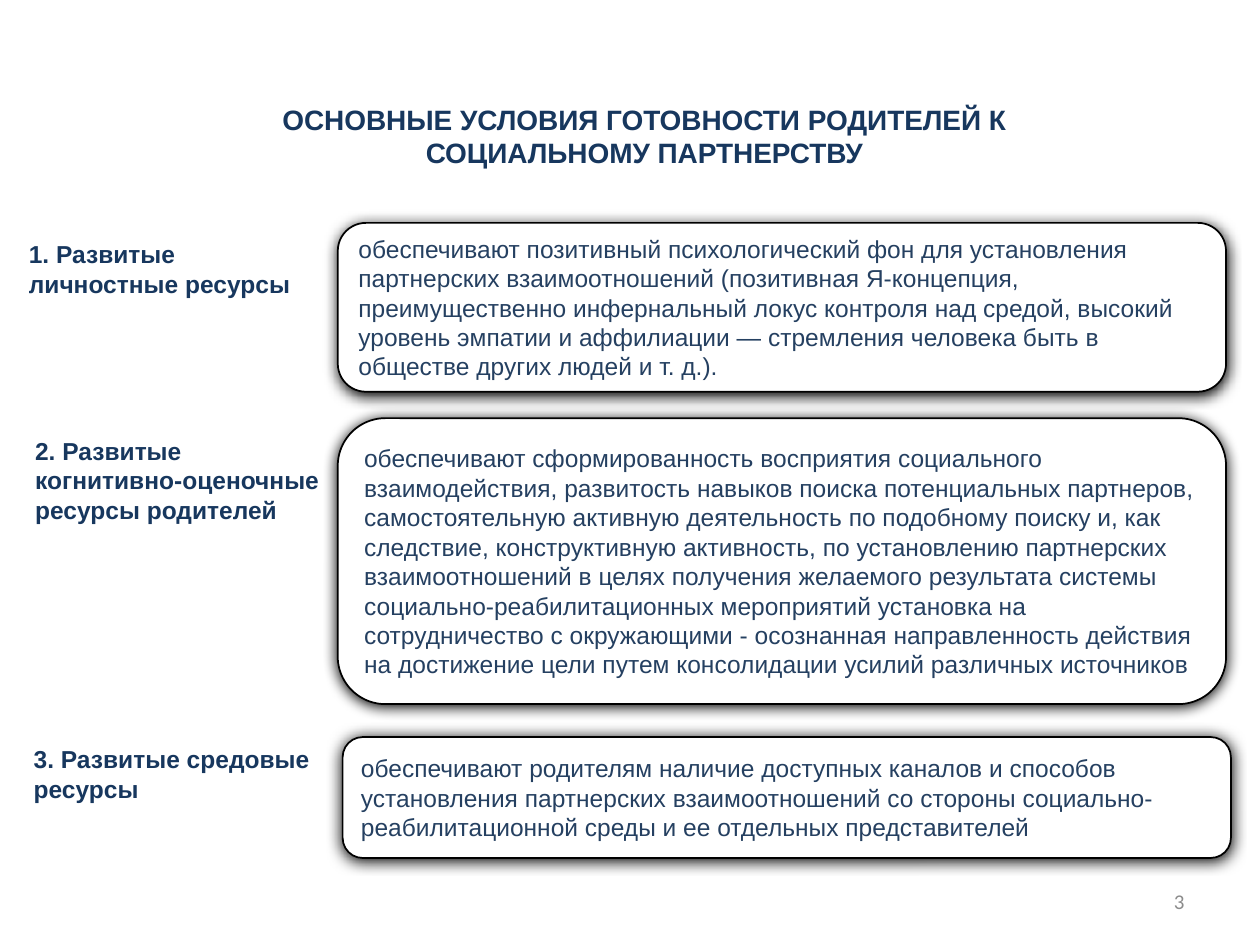
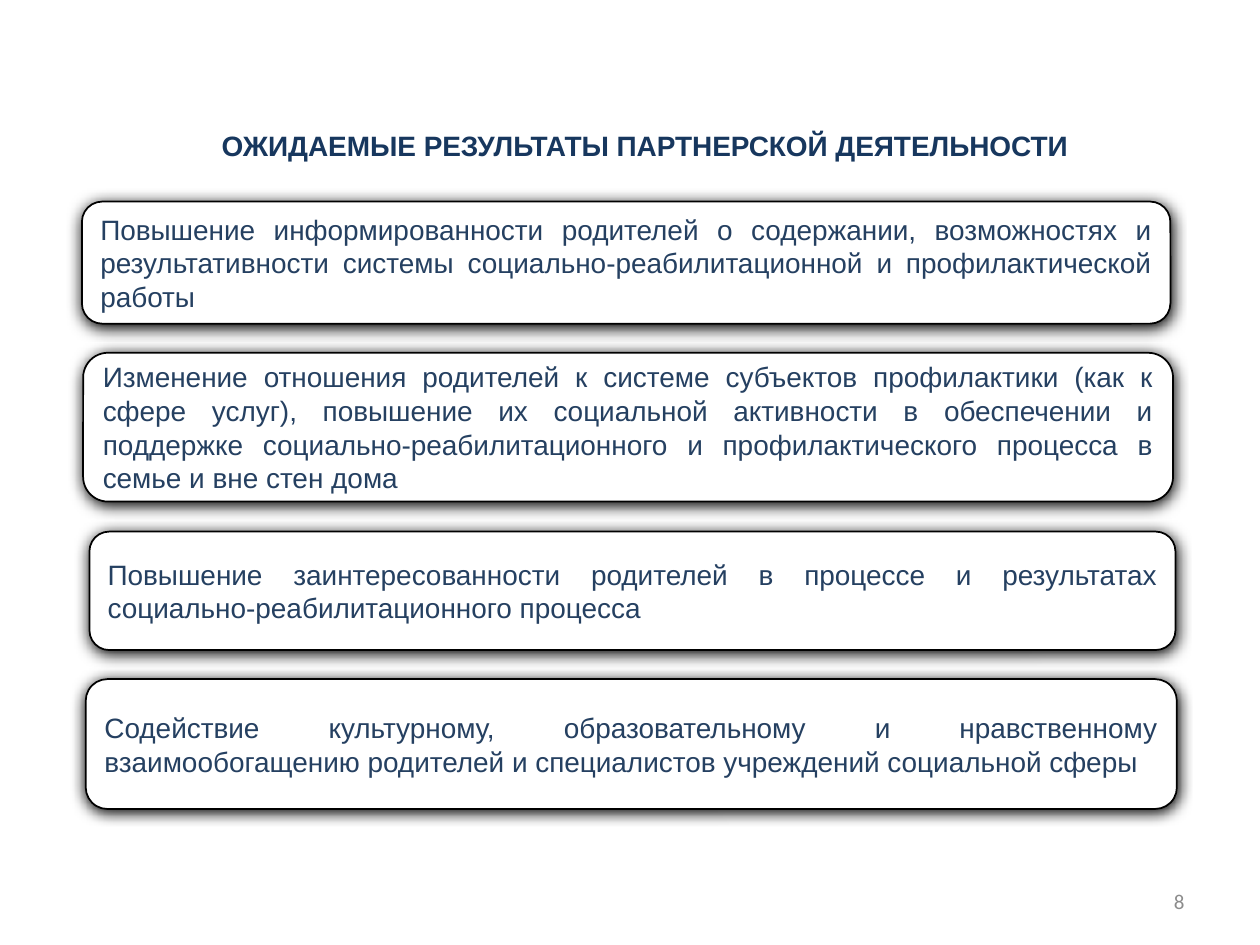
from dataclasses import dataclass
from lxml import etree
from pptx import Presentation
from pptx.dml.color import RGBColor
from pptx.enum.shapes import MSO_SHAPE as Shape
from pptx.enum.text import MSO_ANCHOR as Anchor, MSO_AUTO_SIZE as AutoSize, PP_ALIGN as Align
from pptx.oxml.ns import qn
from pptx.util import Pt


@dataclass(frozen=True)
class Theme:
    heading: RGBColor = RGBColor(0x17, 0x37, 0x5E)
    body: RGBColor = RGBColor(0x25, 0x40, 0x61)
    muted: RGBColor = RGBColor(0x8C, 0x8C, 0x8C)
    paper: RGBColor = RGBColor(0xFF, 0xFF, 0xFF)
    outline: RGBColor = RGBColor(0, 0, 0)
    font: str = "Arial"
    number_font: str = "Calibri"
    title_size: int = 16
    result_size: int = 16
    condition_size: int = 14
    number_size: int = 12


theme = Theme()


def write(box, text, size, color, align=Align.LEFT, anchor=Anchor.TOP, bold=False, font=theme.font):
    frame = box.text_frame
    frame.word_wrap = True
    frame.vertical_anchor = anchor
    frame.text = text
    paragraph = frame.paragraphs[0]
    paragraph.alignment = align
    paragraph.font.name = font
    paragraph.font.size = Pt(size)
    paragraph.font.bold = bold
    paragraph.font.color.rgb = color


def add_card(slide, area, text, size, align):
    card = slide.shapes.add_shape(Shape.ROUNDED_RECTANGLE, *map(Pt, area))
    card.fill.solid()
    card.fill.fore_color.rgb = theme.paper
    card.line.color.rgb = theme.outline
    card.line.width = Pt(1)
    card.shadow.inherit = False
    effects = card.element.spPr.find(qn("a:effectLst"))
    shadow = etree.SubElement(effects, qn("a:outerShdw"), blurRad=str(Pt(8.5)), dist=str(Pt(1)),
                              dir="5400000", algn="t", rotWithShape="0")
    etree.SubElement(shadow, qn("a:srgbClr"), val=str(theme.outline))
    write(card, text, size, theme.body, align, Anchor.MIDDLE)


deck = Presentation()
deck.slide_width, deck.slide_height = Pt(720), Pt(540)

headings = [
    ("ОСНОВНЫЕ УСЛОВИЯ ГОТОВНОСТИ РОДИТЕЛЕЙ К СОЦИАЛЬНОМУ ПАРТНЕРСТВУ", (121.7, 54.7, 493.2, 46.1), "3"),
    ("ОЖИДАЕМЫЕ РЕЗУЛЬТАТЫ ПАРТНЕРСКОЙ ДЕЯТЕЛЬНОСТИ", (96.5, 69.8, 544.3, 26.6), "8"),
]
for heading, area, number in headings:
    slide = deck.slides.add_slide(deck.slide_layouts[5])
    title = slide.shapes.title
    title.left, title.top, title.width, title.height = map(Pt, area)
    write(title, heading, theme.title_size, theme.heading, Align.CENTER, bold=True)
    title.text_frame.auto_size = AutoSize.NONE
    page_number = slide.shapes.add_textbox(Pt(516), Pt(500.5), Pt(168), Pt(28.8))
    write(page_number, number, theme.number_size, theme.muted, Align.RIGHT, Anchor.MIDDLE,
          font=theme.number_font)

conditions_slide, results_slide = deck.slides

conditions = [
    ("1. Развитые личностные ресурсы", (9.4, 133.2, 175, 41),
     "обеспечивают позитивный психологический фон для установления партнерских взаимоотношений "
     "(позитивная Я-концепция, преимущественно инфернальный локус контроля над средой, высокий "
     "уровень эмпатии и аффилиации — стремления человека быть в обществе других людей и т. д.).",
     (193, 127.4, 507.6, 96.5)),
    ("2. Развитые когнитивно-оценочные ресурсы родителей", (13, 245.5, 180, 58.3),
     "обеспечивают сформированность восприятия социального взаимодействия, развитость навыков "
     "поиска потенциальных партнеров, самостоятельную активную деятельность по подобному поиску "
     "и, как следствие, конструктивную активность, по установлению партнерских взаимоотношений "
     "в целях получения желаемого результата системы социально-реабилитационных мероприятий "
     "установка на сотрудничество с окружающими - осознанная направленность действия на "
     "достижение цели путем консолидации усилий различных источников",
     (193, 239, 507.6, 163.4)),
    ("3. Развитые средовые ресурсы", (12.2, 421.9, 180, 41),
     "обеспечивают родителям наличие доступных каналов и способов установления партнерских "
     "взаимоотношений со стороны социально-реабилитационной среды и ее отдельных представителей",
     (195.8, 421.2, 507.6, 69.1)),
]
for resource, resource_area, effect, effect_area in conditions:
    resource_label = conditions_slide.shapes.add_textbox(*map(Pt, resource_area))
    write(resource_label, resource, theme.condition_size, theme.heading, bold=True)
    resource_label.text_frame.auto_size = AutoSize.SHAPE_TO_FIT_TEXT
    add_card(conditions_slide, effect_area, effect, theme.condition_size, Align.LEFT)

results = [
    ("Повышение информированности родителей о содержании, возможностях и результативности "
     "системы социально-реабилитационной и профилактической работы",
     (46.8, 115.2, 622, 69.8)),
    ("Изменение отношения родителей к системе субъектов профилактики (как к сфере услуг), "
     "повышение их социальной активности в обеспечении и поддержке "
     "социально-реабилитационного и профилактического процесса в семье и вне стен дома",
     (47.5, 201.6, 622.8, 85)),
    ("Повышение заинтересованности родителей в процессе и результатах "
     "социально-реабилитационного процесса",
     (51.1, 303.8, 620.6, 67.7)),
    ("Содействие культурному, образовательному и нравственному взаимообогащению родителей "
     "и специалистов учреждений социальной сферы",
     (49, 388.1, 623.5, 74.2)),
]
for result, area in results:
    add_card(results_slide, area, result, theme.result_size, Align.JUSTIFY)

deck.save("out.pptx")
